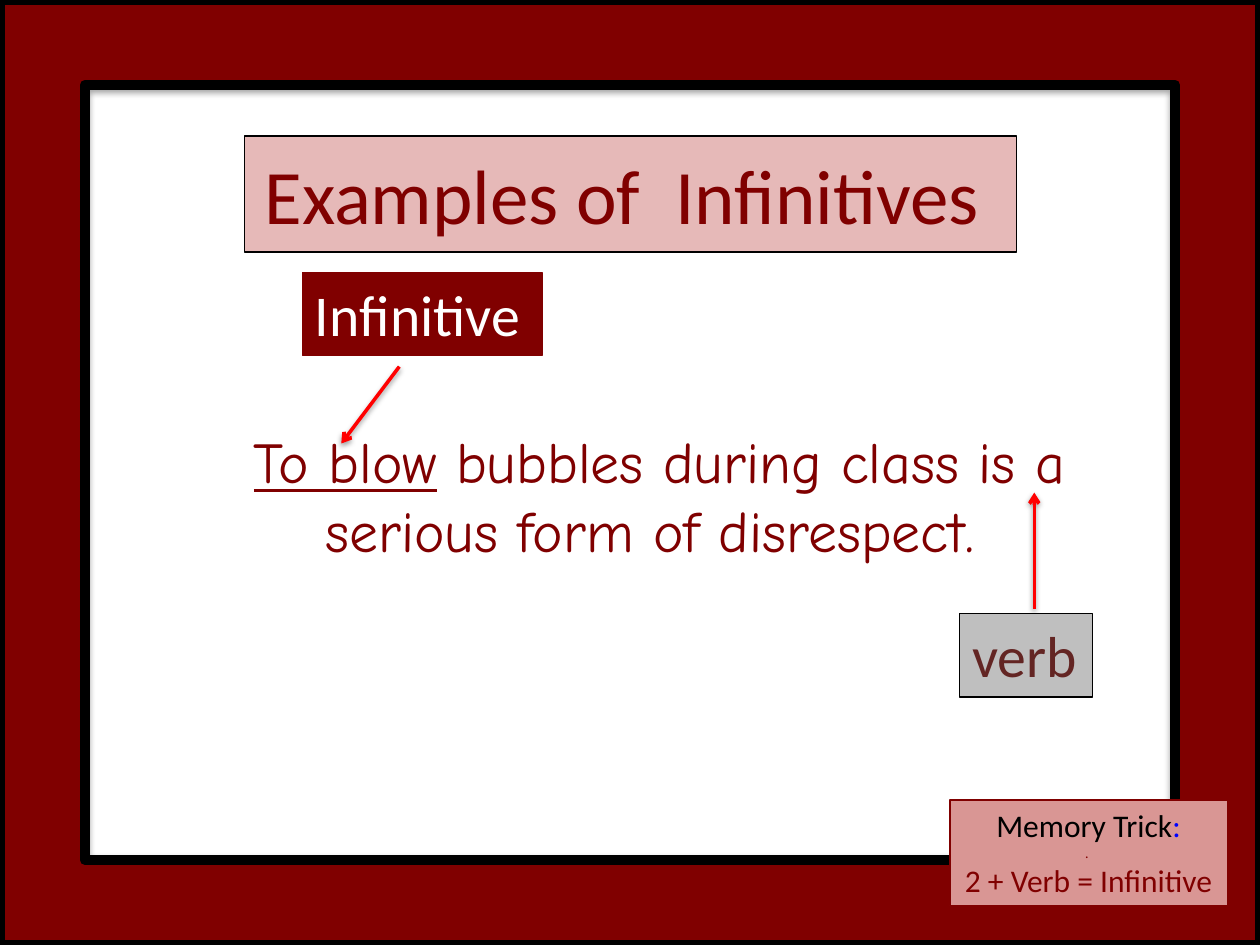
from lxml import etree
from pptx import Presentation
from pptx.dml.color import RGBColor
from pptx.enum.shapes import MSO_CONNECTOR, MSO_SHAPE
from pptx.enum.text import MSO_ANCHOR, PP_ALIGN
from pptx.oxml.ns import qn
from pptx.util import Cm, Pt

STRAIGHT = MSO_CONNECTOR.STRAIGHT
FRAME = MSO_SHAPE.FRAME
TOP, MIDDLE = MSO_ANCHOR.TOP, MSO_ANCHOR.MIDDLE
LEFT, CENTER = PP_ALIGN.LEFT, PP_ALIGN.CENTER

COLORS = {
    "maroon": "800000",
    "dark_red": "632523",
    "rose": "D99694",
    "pale_rose": "E6B9B8",
    "gray": "BFBFBF",
    "red": "FF0000",
    "blue": "0000FF",
    "black": "000000",
    "white": "FFFFFF",
}


def rgb(name):
    return RGBColor.from_string(COLORS[name])


class LessonSlide:
    heading_font = "Calibri"
    sentence_font = "Comic Neue"

    def __init__(self, deck):
        self.slide = deck.slides.add_slide(deck.slide_layouts[6])

    def outline(self, shape, color, width):
        shape.line.color.rgb = rgb(color)
        shape.line.width = Pt(width)

    def shadow(self, shape, distance, opacity):
        effects = etree.SubElement(shape._element.spPr, qn("a:effectLst"))
        outer = etree.SubElement(
            effects, qn("a:outerShdw"), blurRad=str(Pt(3.1)),
            dist=str(Pt(distance)), dir="5400000", rotWithShape="0")
        color = etree.SubElement(outer, qn("a:srgbClr"), val=COLORS["black"])
        etree.SubElement(color, qn("a:alpha"), val=str(opacity * 1000))

    def frame(self, width, height):
        border = self.slide.shapes.add_shape(FRAME, 0, 0, width, height)
        border.adjustments[0] = 0.09
        border.fill.solid()
        border.fill.fore_color.rgb = rgb("maroon")
        self.outline(border, "black", 6)
        self.shadow(border, 1.8, 35)

    def arrow(self, *ends):
        connector = self.slide.shapes.add_connector(
            STRAIGHT, *[Cm(value) for value in ends])
        self.outline(connector, "red", 2)
        line = connector._element.spPr.find(qn("a:ln"))
        etree.SubElement(line, qn("a:tailEnd"), type="arrow")
        self.shadow(connector, 1.6, 38)

    def box(self, place, fill=None, line=None, anchor=TOP, wrap=True):
        box = self.slide.shapes.add_textbox(*[Cm(value) for value in place])
        if fill:
            box.fill.solid()
            box.fill.fore_color.rgb = rgb(fill)
            self.outline(box, line, 0.75)
        box.text_frame.word_wrap = wrap
        box.text_frame.vertical_anchor = anchor
        return box.text_frame

    def add_spans(self, para, texts, size, color, font=heading_font,
                  align=CENTER):
        para.alignment = align
        para.font.name = font
        para.font.size = Pt(size)
        para.font.color.rgb = rgb(color)
        for text in texts:
            para.add_run().text = text
        return para.runs


def main():
    deck = Presentation()
    deck.slide_width, deck.slide_height = Cm(25.4), Cm(19.05)
    page = LessonSlide(deck)

    page.arrow(8.05, 7.39, 6.88, 8.94)
    page.arrow(20.85, 12.27, 20.85, 9.93)

    sentence = page.box((4.57, 8.46, 17.45, 5.16)).paragraphs[0]
    sentence.space_before = Pt(6.6)
    spans = page.add_spans(
        sentence,
        ["To blow", " bubbles during class is a serious form of disrespect. "],
        33, "maroon", page.sentence_font)
    spans[0].font.underline = True

    title = page.box((4.93, 2.74, 15.57, 2.34), "pale_rose", "black", MIDDLE)
    page.add_spans(
        title.paragraphs[0], ["Examples of  Infinitives "], 44, "maroon")

    page.frame(deck.slide_width, deck.slide_height)

    trick = page.box((19.15, 16.13, 5.59, 2.13), "rose", "maroon", wrap=False)
    spans = page.add_spans(
        trick.paragraphs[0], ["Memory Trick", ":"], 18, "black")
    spans[1].font.color.rgb = rgb("blue")
    page.add_spans(trick.add_paragraph(), [". "], 8, "maroon")
    page.add_spans(
        trick.add_paragraph(), ["2 + Verb = Infinitive"], 18, "maroon")

    verb = page.box((19.35, 12.37, 2.67, 1.68), "gray", "black", wrap=False)
    page.add_spans(verb.paragraphs[0], ["verb"], 33, "dark_red", align=LEFT)

    label = page.box((6.1, 5.49, 4.83, 1.68), "maroon", "maroon")
    page.add_spans(label.paragraphs[0], ["Infinitive"], 33, "white", align=LEFT)

    deck.save("out.pptx")


if __name__ == "__main__":
    main()
